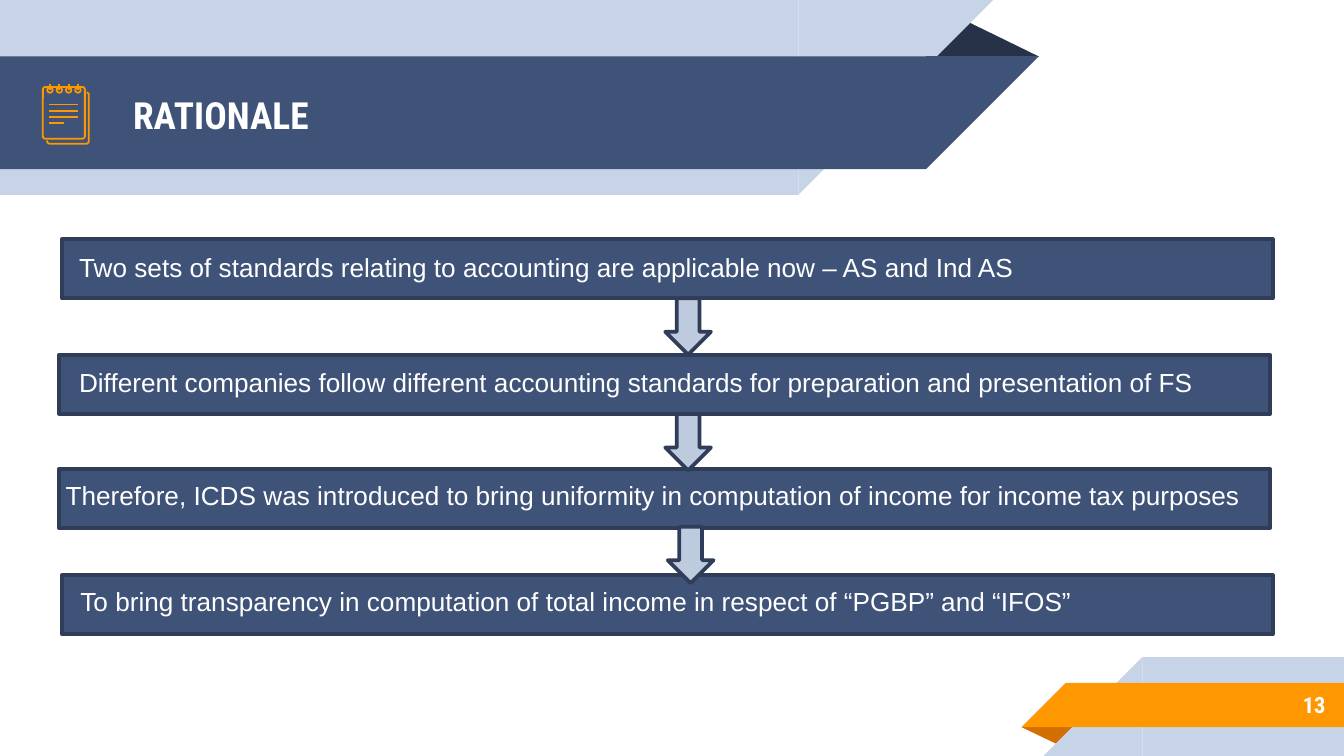
from dataclasses import dataclass

from lxml import etree
from pptx import Presentation
from pptx.dml.color import RGBColor
from pptx.enum import shapes, text
from pptx.oxml import ns
from pptx.util import Pt

SHAPE = shapes.MSO_SHAPE


@dataclass(frozen=True)
class Theme:
    navy: str = "3F5378"
    dark: str = "263248"
    outline: str = "2F3D59"
    pale: str = "C7D3E6"
    arrow: str = "BECBDE"
    orange: str = "FF9800"
    rust: str = "D26F00"
    white: str = "FFFFFF"
    heading: str = "Roboto Condensed"
    body: str = "Arial"
    title_size: float = 20
    body_size: float = 14
    number_size: float = 12
    box_line: float = 2
    icon_line: float = 0.96


T = Theme()

# Box left and top, text left, top and width, wording
STEPS = [
    (33.1, 128.2, 35.3, 131, 615.6,
     "Two sets of standards relating to accounting are applicable now – AS and Ind AS"),
    (31.7, 190.1, 35.3, 192.6, 650.2,
     "Different companies follow different accounting standards for preparation and presentation of FS"),
    (31.7, 251.3, 28.1, 253.5, 646.2,
     "Therefore, ICDS was introduced to bring uniformity in computation of income for income tax purposes"),
    (33.1, 308.2, 36, 310.3, 620,
     "To bring transparency in computation of total income in respect of “PGBP” and “IFOS”"),
]
ARROWS = [(356.4, 159.8), (356.4, 221.8), (357.8, 282.2)]


def rgb(value):
    return RGBColor.from_string(value)


def paint(sp, fill=None, line=None, width=1):
    sp.shadow.inherit = False
    if fill:
        sp.fill.solid()
        sp.fill.fore_color.rgb = rgb(fill)
    else:
        sp.fill.background()
    if line:
        sp.line.color.rgb = rgb(line)
        sp.line.width = Pt(width)
    else:
        sp.line.fill.background()


def add_shape(s, kind, box, fill=None, line=None, width=1, flip=None, turn=0, adj=None):
    sp = s.shapes.add_shape(kind, *map(Pt, box))
    paint(sp, fill, line, width)
    sp.rotation = turn
    if flip:
        sp._element.spPr.xfrm.set(flip, "1")
    if adj is not None:
        sp.adjustments[0] = adj
    return sp


def add_line(s, x1, y1, x2, y2):
    line = s.shapes.add_connector(shapes.MSO_CONNECTOR.STRAIGHT, *map(Pt, (x1, y1, x2, y2)))
    line.line.color.rgb = rgb(T.orange)
    line.line.width = Pt(T.icon_line)
    etree.SubElement(line._element.spPr, ns.qn("a:effectLst"))


def write(sp, words, font, size, bold=False, align=text.PP_ALIGN.LEFT, **frame):
    tf = sp.text_frame
    for name, value in {"word_wrap": True, **frame}.items():
        setattr(tf, name, value)
    p = tf.paragraphs[0]
    p.alignment = align
    r = p.add_run()
    r.text = words
    for name, value in {"name": font, "size": Pt(size), "bold": bold}.items():
        setattr(r.font, name, value)
    r.font.color.rgb = rgb(T.white)


def add_text(s, box, words, font, size, **style):
    write(s.shapes.add_textbox(*map(Pt, box)), words, font, size, **style)


def add_header_ribbon(s):
    """Draw bands that run from the left edge to a slanted right end."""
    add_shape(s, SHAPE.ISOSCELES_TRIANGLE, (495.4, 10.1, 61.2, 20.2), T.dark, adj=0.324)
    for top, width, height, fill in [(0, 427.7, 104.4, T.pale), (30.2, 496.1, 60.5, T.navy)]:
        add_shape(s, SHAPE.RECTANGLE, (0, top, width, height), fill)
        add_shape(s, SHAPE.RIGHT_TRIANGLE, (width, top, height, height), fill, flip="flipV")


def add_footer_ribbon(s):
    """Draw bands that run from a slanted left end to the right edge."""
    add_shape(s, SHAPE.ISOSCELES_TRIANGLE, (547.2, 389.5, 31, 10.1), T.rust, turn=180, adj=0.324)
    for left, top, height, fill in [(612, 352.1, 52.9, T.pale), (571, 365.8, 23.8, T.orange)]:
        add_shape(s, SHAPE.RECTANGLE, (left, top, 720 - left, height), fill)
        add_shape(s, SHAPE.RIGHT_TRIANGLE, (left - height, top, height, height), fill, flip="flipH")


def add_title(s, words):
    title = s.shapes.title
    for name, value in {"left": 64.1, "top": 31, "width": 414, "height": 60.5}.items():
        setattr(title, name, Pt(value))
    write(title, words, T.heading, T.title_size, bold=True, **heading_frame())
    s.shapes._spTree.append(title._element)  # in front of the ribbon


def heading_frame():
    margins = {f"margin_{side}": Pt(7.2) for side in ("left", "top", "right", "bottom")}
    return {"vertical_anchor": text.MSO_ANCHOR.MIDDLE, "auto_size": text.MSO_AUTO_SIZE.NONE, **margins}


def add_notepad(s):
    stroke = {"line": T.orange, "width": T.icon_line}
    back = s.shapes.build_freeform(Pt(25.2), Pt(75.3), scale=1.0)
    corners = [(25.4, 76.4), (26.4, 77), (46.6, 77), (47.5, 76.2), (47.5, 50.2), (46.6, 49.4)]
    back.add_line_segments([(Pt(x), Pt(y)) for x, y in corners], close=False)
    paint(back.convert_to_shape(), **stroke)
    add_shape(s, SHAPE.ROUNDED_RECTANGLE, (23, 46.6, 22.5, 27.7), adj=0.06, **stroke)
    for row, length in enumerate((15.4, 15.4, 15.4, 8)):
        y = 56 + 3.3 * row
        add_line(s, 26.5, y, 26.5 + length, y)
    for ring in range(4):
        x = 26.8 + 5 * ring
        add_shape(s, SHAPE.OVAL, (x - 1.45, 46.8, 2.9, 2.9), **stroke)
        add_line(s, x, 45.2, x, 48)


def add_steps(s):
    edge = {"line": T.outline, "width": T.box_line}
    for left, top, *_ in STEPS:
        add_shape(s, SHAPE.RECTANGLE, (left, top, 648.7, 31.7), T.navy, **edge)
    for left, top in ARROWS:
        add_shape(s, SHAPE.DOWN_ARROW, (left, top, 24.5, 30.2), T.arrow, **edge)
    for _, _, left, top, width, words in STEPS:
        add_text(s, (left, top, width, 24.2), words, T.body, T.body_size,
                 auto_size=text.MSO_AUTO_SIZE.SHAPE_TO_FIT_TEXT)


def main():
    prs = Presentation()
    prs.slide_width, prs.slide_height = Pt(720), Pt(405)
    s = prs.slides.add_slide(prs.slide_layouts[5])
    add_header_ribbon(s)
    add_footer_ribbon(s)
    add_title(s, "RATIONALE")
    add_text(s, (599.8, 365, 117.4, 25.2), "13", T.heading, T.number_size, bold=True,
             align=text.PP_ALIGN.RIGHT, **heading_frame())
    add_notepad(s)
    add_steps(s)
    prs.save("out.pptx")


if __name__ == "__main__":
    main()
